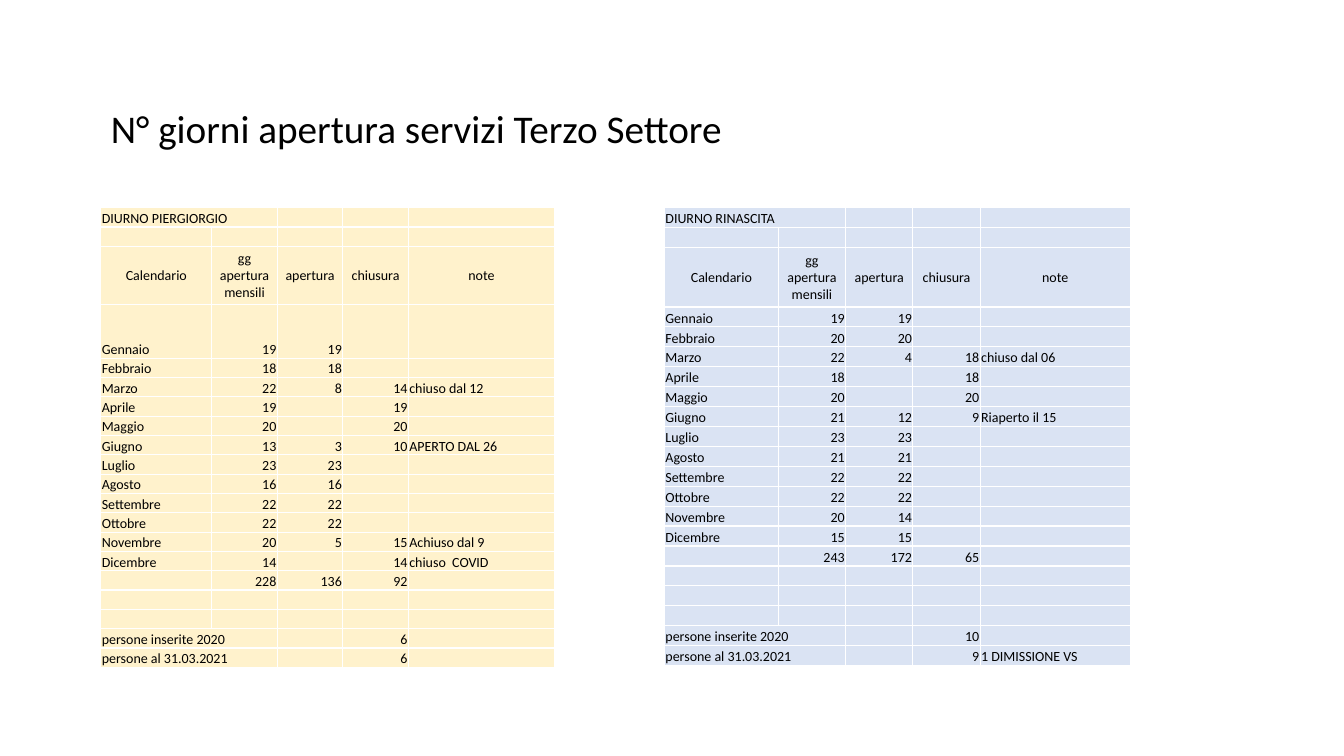
from lxml import etree
from pptx import Presentation
from pptx.dml.color import RGBColor
from pptx.enum.text import MSO_ANCHOR, MSO_AUTO_SIZE, PP_ALIGN
from pptx.oxml.ns import qn
from pptx.util import Inches, Pt

LEFT, CENTER, RIGHT = PP_ALIGN.LEFT, PP_ALIGN.CENTER, PP_ALIGN.RIGHT
TOP, MIDDLE, BOTTOM = MSO_ANCHOR.TOP, MSO_ANCHOR.MIDDLE, MSO_ANCHOR.BOTTOM
COLORS = {"text": "000000", "border": "FFFFFF", "piergiorgio": "FFF2CC", "rinascita": "DAE3F3"}
FONT = "Calibri"
COLUMN_UNITS = [22, 13, 13, 13, 29]

HEADER = ["Calendario", "gg apertura mensili", "apertura", "chiusura", "note"]
MONTHS = ["Gennaio", "Febbraio", "Marzo", "Aprile", "Maggio", "Giugno", "Luglio",
          "Agosto", "Settembre", "Ottobre", "Novembre", "Dicembre"]
INSERTED, PRESENT = "persone inserite 2020", "persone al 31.03.2021"

# Per month: opening days due, days open, days closed, note
CENTRES = [
    {"name": "DIURNO PIERGIORGIO", "fill": "piergiorgio",
     "left": 1, "width": 4.5, "row": 0.192, "tall_rows": {2: 0.58, 3: 0.53},
     "days": [(19, 19, "", ""), (18, 18, "", ""), (22, 8, 14, "chiuso dal 12"),
              (19, "", 19, ""), (20, "", 20, ""), (13, 3, 10, "APERTO DAL 26"),
              (23, 23, "", ""), (16, 16, "", ""), (22, 22, "", ""), (22, 22, "", ""),
              (20, 5, 15, "Achiuso dal 9"), (14, "", 14, "chiuso  COVID")],
     "totals": (228, 136, 92), "blank_rows": 2, "inserted": 6, "present": 6, "remark": ""},
    {"name": "DIURNO RINASCITA", "fill": "rinascita",
     "left": 6.59, "width": 4.62, "row": 0.198, "tall_rows": {2: 0.59},
     "days": [(19, 19, "", ""), (20, 20, "", ""), (22, 4, 18, "chiuso dal 06"),
              (18, "", 18, ""), (20, "", 20, ""), (21, 12, 9, "Riaperto il 15"),
              (23, 23, "", ""), (21, 21, "", ""), (22, 22, "", ""), (22, 22, "", ""),
              (20, 14, "", ""), (15, 15, "", "")],
     "totals": (243, 172, 65), "blank_rows": 3, "inserted": 10, "present": 9,
     "remark": "1 DIMISSIONE VS"},
]


def write(frame, text, size=10, align=LEFT, anchor=BOTTOM):
    frame.vertical_anchor = anchor
    paragraph = frame.paragraphs[0]
    paragraph.alignment = align
    if text == "":
        # Keeps an empty cell as low as its row
        etree.SubElement(paragraph._p, qn("a:endParaRPr"), sz=str(size * 100))
        return
    run = paragraph.add_run()
    run.text = str(text)
    run.font.name, run.font.size = FONT, Pt(size)
    run.font.color.rgb = RGBColor.from_string(COLORS["text"])


def draw_borders(cell):
    properties = cell._tc.get_or_add_tcPr()
    for side in ("lnL", "lnR", "lnT", "lnB"):
        line = etree.SubElement(properties, qn(f"a:{side}"), w=str(Pt(1)))
        fill = etree.SubElement(line, qn("a:solidFill"))
        etree.SubElement(fill, qn("a:srgbClr"), val=COLORS["border"])


prs = Presentation()
prs.slide_width, prs.slide_height = Inches(13.33), Inches(7.5)
slide = prs.slides.add_slide(prs.slide_layouts[5])

# Title
title = slide.shapes.title
title.left, title.top, title.width, title.height = map(Inches, (1, 0.98, 7.43, 0.57))
title.text_frame.word_wrap = True
title.text_frame.auto_size = MSO_AUTO_SIZE.NONE
write(title.text_frame, "N° giorni apertura servizi Terzo Settore", size=28, anchor=TOP)

# One calendar table per day centre
for centre in CENTRES:
    blank = [""] * 5
    rows = [[centre["name"], "", "", "", ""], blank, HEADER]
    rows += [[month, *days] for month, days in zip(MONTHS, centre["days"])]
    rows += [["", *centre["totals"], ""]] + [blank] * centre["blank_rows"]
    rows += [[INSERTED, "", "", centre["inserted"], ""],
             [PRESENT, "", "", centre["present"], centre["remark"]]]
    heights = [centre["tall_rows"].get(r, centre["row"]) for r in range(len(rows))]

    calendar = slide.shapes.add_table(
        len(rows), len(HEADER), Inches(centre["left"]), Inches(2.06),
        Inches(centre["width"]), Inches(sum(heights))).table
    calendar.first_row = calendar.horz_banding = False
    for column, units in zip(calendar.columns, COLUMN_UNITS):
        column.width = Inches(centre["width"] * units / sum(COLUMN_UNITS))

    for r, values in enumerate(rows):
        calendar.rows[r].height = Inches(heights[r])
        for c, value in enumerate(values):
            cell = calendar.cell(r, c)
            cell.margin_left = cell.margin_right = cell.margin_top = Inches(0.01)
            cell.margin_bottom = 0
            draw_borders(cell)
            cell.fill.solid()
            cell.fill.fore_color.rgb = RGBColor.from_string(COLORS[centre["fill"]])
            is_header = values is HEADER
            align = CENTER if is_header else RIGHT if c in (1, 2, 3) else LEFT
            write(cell.text_frame, value, align=align)
            cell.vertical_anchor = MIDDLE if is_header else BOTTOM
        if values[0] in (centre["name"], INSERTED, PRESENT):
            calendar.cell(r, 0).merge(calendar.cell(r, 1))

prs.save("out.pptx")
